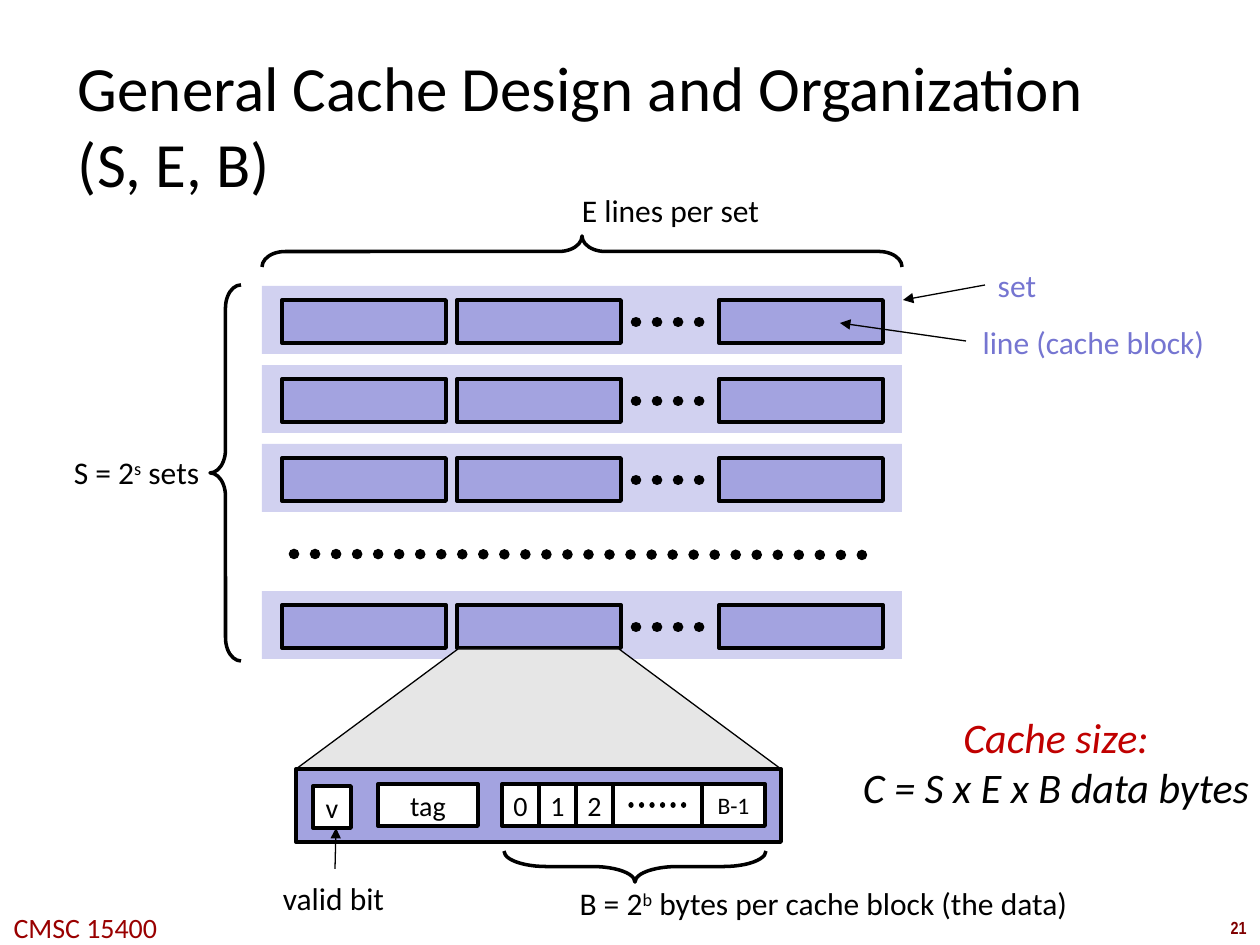
from dataclasses import dataclass

from lxml import etree
from pptx import Presentation
from pptx import util as u
from pptx.dml.color import RGBColor
from pptx.enum import shapes, text
from pptx.oxml import ns

EMU_PER_PX = 914400 / 126


@dataclass(frozen=True)
class Theme:
    font: str = "Calibri"
    number_font: str = "Arial Narrow"
    ink: str = "000000"
    white: str = "FFFFFF"
    set_fill: str = "D1D1F0"
    line_fill: str = "A3A3E0"
    zoom_fill: str = "E6E6E6"
    label: str = "7575D1"
    accent: str = "C00000"
    footer: str = "990000"
    number: str = "800000"
    title_size: float = 36
    formula_size: float = 24
    label_size: float = 18
    cell_size: float = 16
    last_cell_size: float = 13.5
    number_size: float = 10
    thick: float = 2.25
    brace: float = 2
    thin: float = 0.75


T = Theme()


def px(n):
    return u.Emu(round(n * EMU_PER_PX))


def rgb(value):
    return RGBColor.from_string(value)


def add_text(tf, runs, size=T.label_size, color=T.ink, font=T.font, bold=False,
             italic=False, align=text.PP_ALIGN.CENTER, new_paragraph=False):
    """Write runs into a frame; a run given as a 1-tuple is superscript."""
    p = tf.add_paragraph() if new_paragraph else tf.paragraphs[0]
    p.alignment = align
    for run in [runs] if isinstance(runs, str) else runs:
        r = p.add_run()
        r.text = run if isinstance(run, str) else run[0]
        f = r.font
        f.name, f.size, f.bold, f.italic = font, u.Pt(size), bold, italic
        f.color.rgb = rgb(color)
        if not isinstance(run, str):
            r._r.get_or_add_rPr().set("baseline", "30000")


def add_label(slide, box, runs, wrap=False, anchor=text.MSO_ANCHOR.TOP, **fmt):
    tf = slide.shapes.add_textbox(*map(px, box)).text_frame
    tf.word_wrap = wrap
    tf.vertical_anchor = anchor
    add_text(tf, runs, **fmt)
    return tf


def add_box(slide, box, fill=None, line=None, kind=shapes.MSO_SHAPE.RECTANGLE,
            label=None, **fmt):
    sp = slide.shapes.add_shape(kind, *map(px, box))
    sp.shadow.inherit = False
    if fill:
        sp.fill.solid()
        sp.fill.fore_color.rgb = rgb(fill)
    else:
        sp.fill.background()
    if line:
        sp.line.color.rgb = rgb(T.ink)
        sp.line.width = u.Pt(line)
    else:
        sp.line.fill.background()
    if label:
        tf = sp.text_frame
        tf.word_wrap = False
        tf.vertical_anchor = text.MSO_ANCHOR.MIDDLE
        add_text(tf, label, **fmt)
    return sp


def add_brace(slide, box, curve, rotation=0):
    """Brace that fills the box as seen, whatever its rotation."""
    x, y, w, h = box
    if rotation:
        x, y, w, h = x + (w - h) / 2, y + (h - w) / 2, h, w
    sp = add_box(slide, (x, y, w, h), line=T.brace, kind=shapes.MSO_SHAPE.LEFT_BRACE)
    sp.adjustments[0] = curve
    sp.rotation = rotation


def add_line(slide, start, end, width):
    sp = slide.shapes.add_connector(shapes.MSO_CONNECTOR.STRAIGHT,
                                    *map(px, (*start, *end)))
    sp.line.color.rgb = rgb(T.ink)
    sp.line.width = u.Pt(width)
    etree.SubElement(sp._element.spPr, ns.qn("a:effectLst"))
    return sp.line._get_or_add_ln()


def add_arrow(slide, start, tip):
    ln = add_line(slide, start, tip, T.thin)
    etree.SubElement(ln, ns.qn("a:tailEnd"), type="triangle")


def add_dots(slide, start, end, width):
    ln = add_line(slide, start, end, width)
    ln.set("cap", "rnd")
    etree.SubElement(ln, ns.qn("a:prstDash"), val="sysDot")


def draw_cache_set(slide, box):
    x, y, _, _ = box
    add_box(slide, box, T.set_fill)
    for dx in (20, 195, 457):
        add_box(slide, (x + dx, y + 14, 164, 43), T.line_fill, T.thick)
    add_dots(slide, (x + 374, y + 36), (x + 458, y + 36), 6)


def draw_cache(slide, box):
    """Sets with their braces and callouts."""
    x, y, w, h = box
    for dy in (0, 79, 158, 305):
        draw_cache_set(slide, (x, y + dy, w, 68))
    add_dots(slide, (x + 32, y + 268), (x + 620, y + 269), 6)

    add_brace(slide, (x, y - 50, w, 31), 0.75, rotation=90)
    add_label(slide, (x + 306, y - 101, 205, 50), "E lines per set")
    add_brace(slide, (x - 52, y - 1, 31, h + 3), 0.75)
    add_label(slide, (x - 203, y + 161, 155, 50), ["S = 2", ("s",), " sets"])

    add_arrow(slide, (x + 723, y - 1), (x + w + 1, y + 14))
    add_label(slide, (x + 723, y - 26, 64, 50), "set", color=T.label,
              anchor=text.MSO_ANCHOR.MIDDLE)
    add_arrow(slide, (x + 704, y + 55), (x + 578, y + 37))
    add_label(slide, (x + 707, y + 31, 249, 50), "line (cache block)", color=T.label)


def draw_line_detail(slide, box):
    """Enlarged cache line: valid bit, tag and data bytes."""
    x, y, w, h = box
    zoom = add_box(slide, (x, y - 120, w, 120), T.zoom_fill, T.thin,
                   shapes.MSO_SHAPE.TRAPEZOID)
    zoom.adjustments[0] = 1.35
    add_box(slide, box, T.line_fill, T.thick)

    cell = dict(fill=T.white, line=T.thick, size=T.cell_size)
    add_box(slide, (x + 17, y + 17, 38, 42), label="v", **cell)
    add_box(slide, (x + 82, y + 15, 100, 42), label="tag", **cell)
    edges = (206, 243, 280, 317, 406, 469)
    for name, left, right in zip(("0", "1", "2", None, "B-1"), edges, edges[1:]):
        size = T.last_cell_size if name == "B-1" else T.cell_size
        add_box(slide, (x + left, y + 15, right - left, 42),
                **{**cell, "label": name, "size": size})
    add_dots(slide, (x + 335, y + 36), (x + 398, y + 36), 3)

    add_brace(slide, (x + 208, y + 82, 262, 31), 1.37, rotation=270)
    add_label(slide, (x + 257, y + 109, 541, 50),
              ["B = 2", ("b",), " bytes per cache block (the data)"])
    add_label(slide, (x - 28, y + 104, 131, 50), "valid bit")
    add_arrow(slide, (x + 39, y + 100), (x + 40, y + 59))


def draw_title(slide, box):
    tf = add_label(slide, box, "General Cache Design and Organization (S, E, B)",
                   wrap=True, anchor=text.MSO_ANCHOR.MIDDLE, size=T.title_size,
                   align=text.PP_ALIGN.LEFT)
    tf.margin_left = tf.margin_right = tf.margin_top = tf.margin_bottom = px(5)


def draw_formula(slide, box):
    fmt = dict(size=T.formula_size, italic=True)
    tf = add_label(slide, box, "Cache size:", color=T.accent, **fmt)
    add_text(tf, "C = S x E x B data bytes", new_paragraph=True, **fmt)


def draw_footer(slide, box):
    x, y, w, _ = box
    add_label(slide, (x + w - 43, y + 7, 43, 34), "21", size=T.number_size,
              color=T.number, font=T.number_font, bold=True)
    add_label(slide, (x - 4, y, 179, 47), "CMSC 15400", size=T.cell_size,
              color=T.footer)


def main():
    prs = Presentation()
    prs.slide_width, prs.slide_height = px(1260), px(945)
    slide = prs.slides.add_slide(prs.slide_layouts[6])
    draw_footer(slide, (0, 904, 1260, 41))
    draw_title(slide, (73, 73, 1071, 103))
    draw_cache(slide, (262, 286, 640, 373))
    draw_line_detail(slide, (296, 769, 485, 73))
    draw_formula(slide, (849, 705, 414, 115))
    prs.save("out.pptx")


if __name__ == "__main__":
    main()
